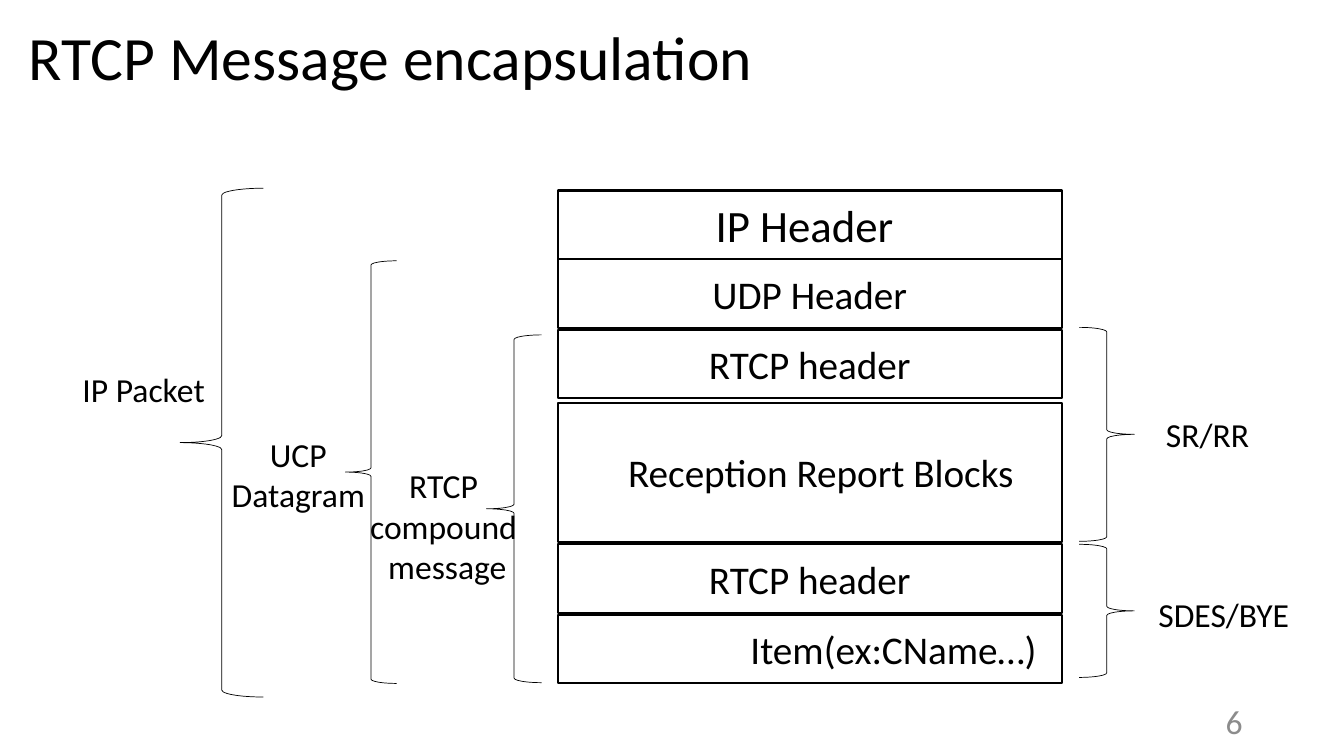
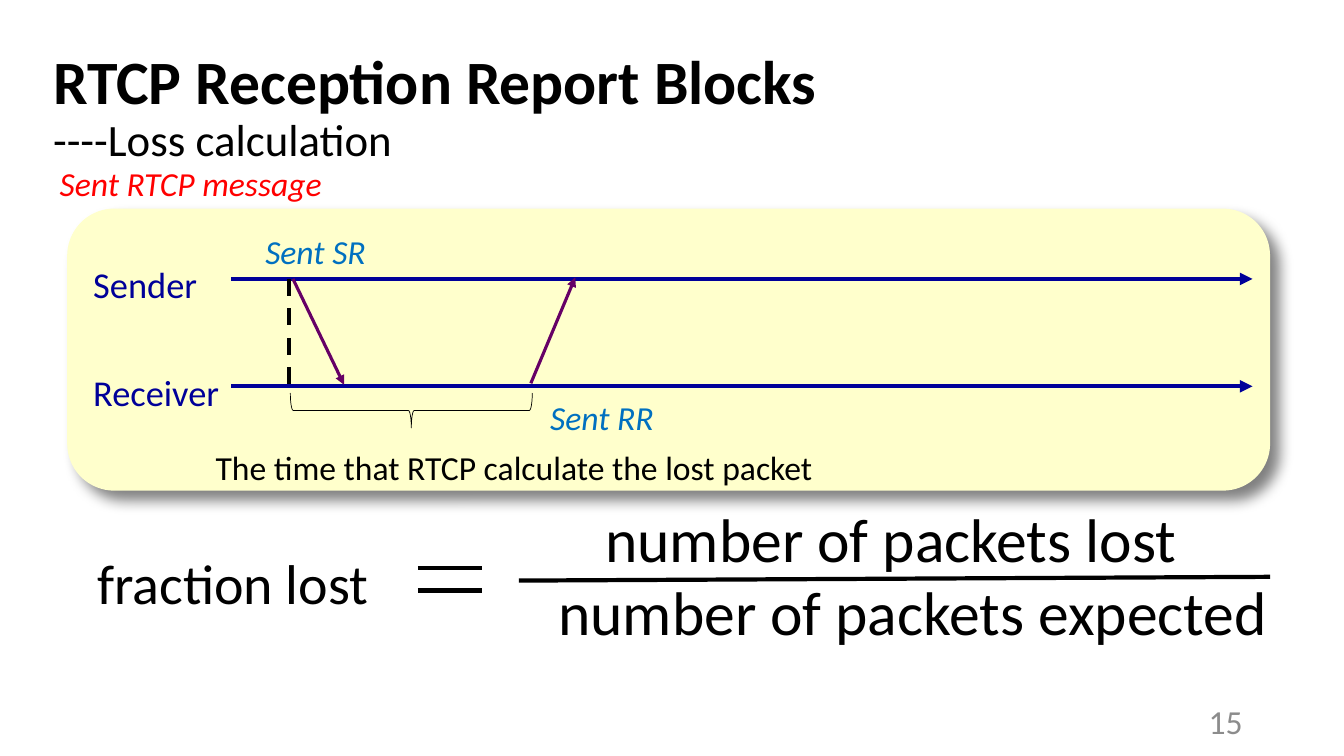
from lxml.etree import SubElement
from pptx import Presentation
from pptx.dml.color import RGBColor
from pptx.enum.dml import MSO_LINE
from pptx.enum.shapes import MSO_CONNECTOR, MSO_SHAPE
from pptx.enum.text import MSO_ANCHOR as ANCHOR, MSO_AUTO_SIZE, PP_ALIGN as ALIGN
from pptx.oxml.ns import qn
from pptx.util import Inches, Pt

BLACK = RGBColor(0x00, 0x00, 0x00)
GREY = RGBColor(0x8C, 0x8C, 0x8C)
CREAM = RGBColor(0xFF, 0xFF, 0xCC)
NAVY = RGBColor(0x00, 0x00, 0x99)
PURPLE = RGBColor(0x66, 0x00, 0x66)
BLUE = RGBColor(0x00, 0x70, 0xC0)
RED = RGBColor(0xFF, 0x00, 0x00)
FONT = "Calibri"


def write(frame, text, size=24, color=BLACK, bold=False, italic=False,
          align=ALIGN.LEFT, anchor=ANCHOR.TOP, spacing=None):
    """Add each line of text to the frame as a formatted paragraph."""
    frame.word_wrap = True
    frame.auto_size = MSO_AUTO_SIZE.NONE
    frame.vertical_anchor = anchor
    for line in text.split("\n"):
        paragraph = frame.add_paragraph() if frame.text else frame.paragraphs[0]
        paragraph.alignment = align
        paragraph.line_spacing = spacing
        run = paragraph.add_run()
        run.text = line
        font = run.font
        font.name, font.size, font.color.rgb = FONT, Pt(size), color
        font.bold, font.italic = bold, italic


class Deck:
    """Shared style and current slide; lengths are percentages of the slide."""

    def __init__(self):
        self.prs = Presentation()
        self.prs.slide_width, self.prs.slide_height = Inches(13.33), Inches(7.5)
        self.slide = None

    def x(self, share):
        return round(self.prs.slide_width * share / 100)

    def y(self, share):
        return round(self.prs.slide_height * share / 100)

    def box(self, left, top, width, height):
        return self.x(left), self.y(top), self.x(width), self.y(height)

    def new_slide(self, title, number, left, top, bold=False, subtitle=None):
        self.slide = self.prs.slides.add_slide(self.prs.slide_layouts[5])
        heading = self.slide.shapes.title
        heading.left, heading.top, heading.width, heading.height = self.box(
            left, top, 86.3, 19.3)
        style = dict(anchor=ANCHOR.MIDDLE, spacing=0.9)
        write(heading.text_frame, title, size=44, bold=bold, **style)
        if subtitle:
            write(heading.text_frame, subtitle, size=32, **style)
        self.text(number, 70.7, 92.7, 22.5, 5.3, color=GREY,
                  align=ALIGN.RIGHT, anchor=ANCHOR.MIDDLE)

    def text(self, text, left, top, width, height=6.7, **style):
        area = self.slide.shapes.add_textbox(*self.box(left, top, width, height))
        write(area.text_frame, text, **style)

    def shape(self, kind, left, top, width, height, fill=None, line=None):
        shape = self.slide.shapes.add_shape(kind, *self.box(left, top, width, height))
        shape.shadow.inherit = False
        if fill is None:
            shape.fill.background()
        else:
            shape.fill.solid()
            shape.fill.fore_color.rgb = fill
        if line is None:
            shape.line.fill.background()
        else:
            shape.line.color.rgb, shape.line.width = BLACK, Pt(line)
        return shape

    def block(self, text, top, height=9.1, size=28):
        block = self.shape(MSO_SHAPE.RECTANGLE, 41.5, top, 37.5, height, line=1.5)
        if text:
            write(block.text_frame, text, size=size, align=ALIGN.CENTER,
                  anchor=ANCHOR.MIDDLE)

    def brace(self, left, top, width, height, kind=MSO_SHAPE.LEFT_BRACE, turn=0):
        self.shape(kind, left, top, width, height, line=0.5).rotation = turn

    def panel(self, left, top, width, height):
        panel = self.shape(MSO_SHAPE.ROUNDED_RECTANGLE, left, top, width, height,
                           fill=CREAM)
        effects = panel.element.spPr.find(qn("a:effectLst"))
        shadow = SubElement(effects, qn("a:outerShdw"), blurRad=str(Pt(10)),
                            dist=str(Pt(10)), dir=str(45 * 60000),
                            algn="tl", rotWithShape="0")
        tint = SubElement(shadow, qn("a:srgbClr"), val=str(BLACK))
        SubElement(tint, qn("a:alpha"), val="50000")

    def line(self, x1, y1, x2, y2, color=BLACK, width=3, arrow=False, dash=None):
        line = self.slide.shapes.add_connector(
            MSO_CONNECTOR.STRAIGHT, self.x(x1), self.y(y1), self.x(x2), self.y(y2))
        line.line.color.rgb, line.line.width = color, Pt(width)
        if dash:
            line.line.dash_style = dash
        if arrow:
            SubElement(line.line._get_or_add_ln(), qn("a:tailEnd"), type="triangle")
        SubElement(line._element.spPr, qn("a:effectLst"))


def encapsulation(deck):
    deck.new_slide("RTCP Message encapsulation", "6", 1.4, -1.7)

    # Packet layers
    deck.block("IP Header ", 25.2, size=32)
    deck.block("UDP Header", 34.3)
    deck.block("RTCP header", 43.6)
    deck.block(None, 53.3, height=18.4)
    deck.block("RTCP header", 72)
    deck.block(None, 81.3)
    deck.text("Reception Report Blocks", 46, 58.7, 32, 7.6, size=28)
    deck.text("Item(ex:CName…)", 55.1, 82, 24, 7.6, size=28)

    # Nested units on the left
    for extent in ((13.4, 24.9, 6.2, 67.3), (25.7, 34.5, 3.8, 55.9),
                   (36.2, 44.3, 4.1, 46)):
        deck.brace(*extent)
    deck.text("IP Packet", 5.4, 48.1, 11.1)
    deck.text("UCP Datagram", 15.7, 56.7, 13, 12.1, align=ALIGN.CENTER)
    deck.text("RTCP\ncompound\n message", 26.3, 60.9, 13.4, 17.5, align=ALIGN.CENTER)

    # Message types on the right
    for name, top, height, label_top, label_width in (
            ("SR/RR", 43.3, 28.3, 54.1, 11.1),
            ("SDES/BYE", 72, 17.6, 77.9, 13.5)):
        deck.brace(80.3, top, 4.1, height, turn=180)
        deck.text(name, 84.3, label_top, label_width, align=ALIGN.CENTER)


def loss_calculation(deck):
    deck.new_slide("RTCP Reception Report Blocks ", "15", 3.2, 4.7, bold=True,
                   subtitle="----Loss calculation")
    deck.panel(5, 27.6, 89.5, 37.3)

    # Loss formula
    deck.text("fraction lost", 6.5, 71.9, 24.3, 9.7, size=40)
    deck.text("number of packets lost", 44.3, 65.6, 44.6, 11.2, size=44)
    deck.text("number of packets expected", 40.8, 75.3, 59.2, 11.2, size=44)
    deck.line(38.6, 76.8, 94.5, 76.3)
    for equals_y in (75.1, 78.1):
        deck.line(31.1, equals_y, 35.9, equals_y)

    # Timelines
    sender_y, receiver_y = 36.9, 51.1
    for party, axis_y, label_y in (("Sender", sender_y, 34),
                                   ("Receiver", receiver_y, 48.3)):
        deck.line(17.2, axis_y, 93.2, axis_y, color=NAVY, arrow=True)
        deck.text(party, 6.2, label_y, 12.8, 7.2, size=26, color=NAVY)

    # Report messages
    deck.line(21.8, sender_y, 25.6, 50.9, color=PURPLE, width=2.25, arrow=True)
    deck.line(39.5, 50.7, 42.8, 36.7, color=PURPLE, width=2.25, arrow=True)
    deck.text("Sent SR", 19, 29.9, 13.6, color=BLUE, italic=True)
    deck.text("Sent RR", 40.2, 51.9, 11.9, color=BLUE, italic=True)
    deck.text("Sent RTCP message", 3.7, 20.9, 24.2, color=RED, italic=True)

    # Measured interval
    deck.brace(29.3, 38.3, 2.6, 32, kind=MSO_SHAPE.RIGHT_BRACE, turn=90)
    deck.line(21.5, sender_y, 21.5, receiver_y, dash=MSO_LINE.DASH)
    deck.text("The time that RTCP calculate the lost packet", 15.3, 58.4, 51.8)


def main():
    deck = Deck()
    encapsulation(deck)
    loss_calculation(deck)
    deck.prs.save("out.pptx")


if __name__ == "__main__":
    main()
